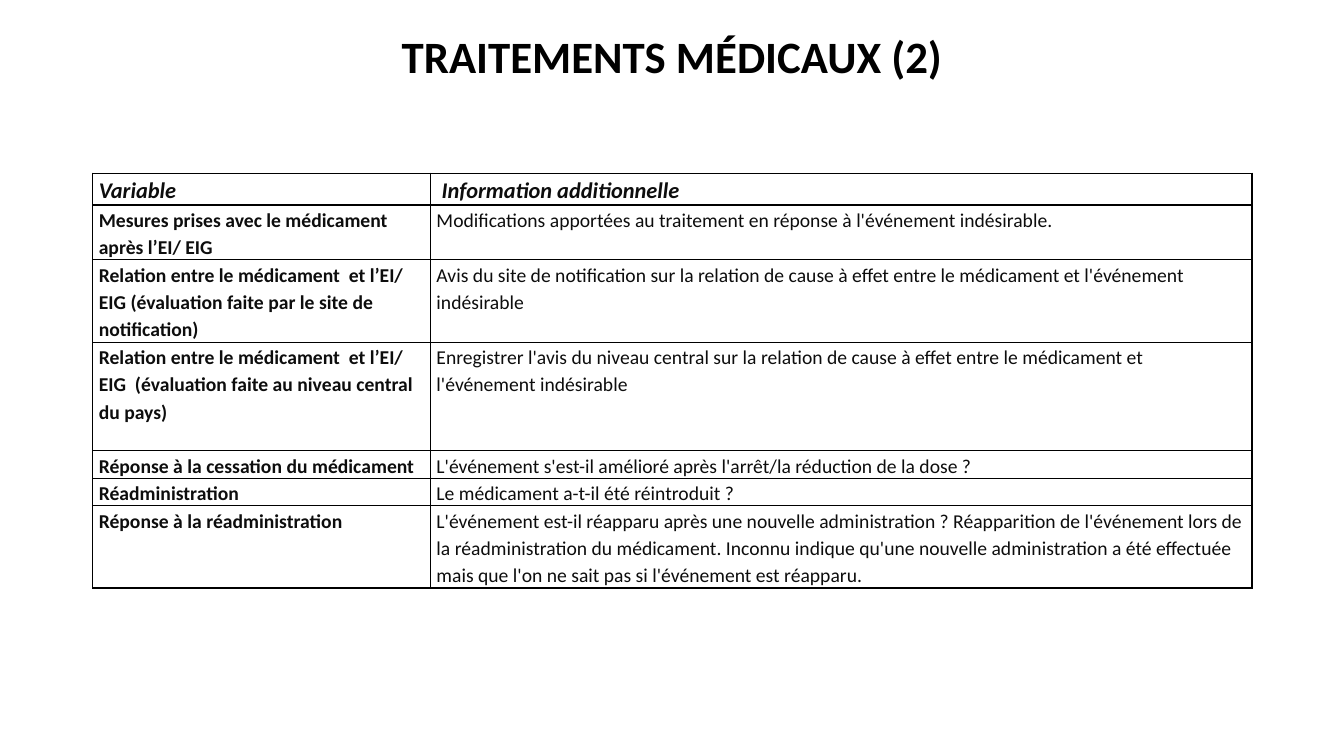
"""Build the slide on medical treatment variables."""
from lxml import etree
from pptx import Presentation
from pptx.dml.color import RGBColor
from pptx.enum.text import MSO_ANCHOR, PP_ALIGN
from pptx.oxml.ns import qn
from pptx.util import Cm, Pt

TOP, MIDDLE = MSO_ANCHOR.TOP, MSO_ANCHOR.MIDDLE
CENTER = PP_ALIGN.CENTER
COLORS = {"title": "000000", "text": "0D0D0D", "border": "000000"}
COL_WIDTHS = [8.51, 20.7]
ROWS = [
    (0.79, "Variable", "Information additionnelle"),
    (1.37, "Mesures prises avec le médicament après l’EI/ EIG",
     "Modifications apportées au traitement en réponse à l'événement indésirable."),
    (2.06, "Relation entre le médicament  et l’EI/ EIG (évaluation faite par le site de notification)",
     "Avis du site de notification sur la relation de cause à effet entre le médicament "
     "et l'événement indésirable"),
    (2.74, "Relation entre le médicament  et l’EI/ EIG  (évaluation faite au niveau central du pays)",
     "Enregistrer l'avis du niveau central sur la relation de cause à effet entre le médicament "
     "et l'événement indésirable"),
    (0.69, "Réponse à la cessation du médicament",
     "L'événement s'est-il amélioré après l'arrêt/la réduction de la dose ?"),
    (0.69, "Réadministration", "Le médicament a-t-il été réintroduit ?"),
    (2.06, "Réponse à la réadministration",
     "L'événement est-il réapparu après une nouvelle administration ? Réapparition de "
     "l'événement lors de la réadministration du médicament. Inconnu indique qu'une nouvelle "
     "administration a été effectuée mais que l'on ne sait pas si l'événement est réapparu."),
]


def add_run(p, text, color, fmt):
    r = p.add_run()
    r.text = text
    r.font.color.rgb = RGBColor.from_string(COLORS[color])
    for name, value in fmt.items():
        setattr(r.font, name, value)


def add_border(cell, side, width):
    ln = etree.SubElement(cell._tc.get_or_add_tcPr(), qn(f"a:{side}"), w=str(Pt(width)))
    fill = etree.SubElement(ln, qn("a:solidFill"))
    etree.SubElement(fill, qn("a:srgbClr"), val=COLORS["border"])


prs = Presentation()
prs.slide_width, prs.slide_height = Cm(33.87), Cm(19.05)
s = prs.slides.add_slide(prs.slide_layouts[5])

title = s.shapes.title
title.left, title.top, title.width, title.height = Cm(5.51), Cm(0.53), Cm(22.86), Cm(1.75)
tf = title.text_frame
tf.vertical_anchor = MIDDLE
p = tf.paragraphs[0]
p.alignment = CENTER
add_run(p, "TRAITEMENTS MÉDICAUX (2)", "title", {"name": "Calibri", "size": Pt(32), "bold": True})

frame = s.shapes.add_table(len(ROWS), len(COL_WIDTHS), Cm(2.34), Cm(4.37),
                           Cm(sum(COL_WIDTHS)), Cm(sum(row[0] for row in ROWS)))
table = frame.table
for column, width in zip(table.columns, COL_WIDTHS):
    column.width = Cm(width)

for i, (height, *texts) in enumerate(ROWS):
    table.rows[i].height = Cm(height)
    header = i == 0
    for j, text in enumerate(texts):
        cell = table.cell(i, j)
        cell.margin_left = Cm(0.28 if header and j == 1 else 0.15)
        cell.margin_right = Cm(0.15)
        cell.margin_top = cell.margin_bottom = 0
        cell.vertical_anchor = MIDDLE if header else TOP
        for side in ("lnL", "lnR", "lnT", "lnB"):
            thick = (header and side in ("lnT", "lnB")) or (i == 1 and side == "lnT")
            add_border(cell, side, 1.5 if thick else 1)
        cell.fill.background()
        p = cell.text_frame.paragraphs[0]
        p.line_spacing = 1.15
        add_run(p, text, "text", {"name": "Calibri", "size": Pt(16 if header else 14),
                                  "bold": header or j == 0, "italic": header})

prs.save("out.pptx")
